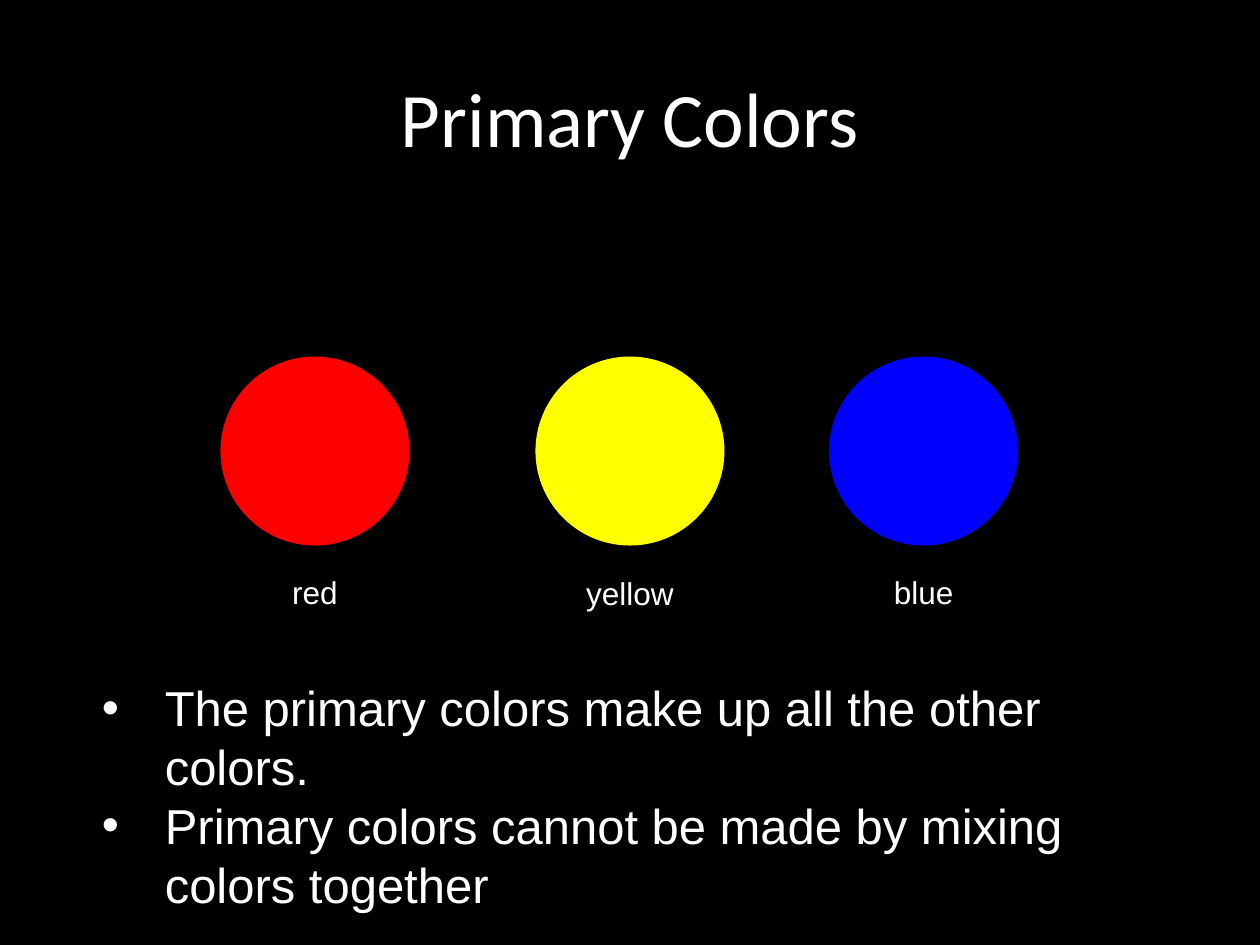
from dataclasses import dataclass

from lxml.etree import SubElement
from pptx import Presentation
from pptx.dml.color import RGBColor
from pptx.enum.shapes import MSO_SHAPE
from pptx.enum.text import MSO_ANCHOR, MSO_AUTO_SIZE, PP_ALIGN
from pptx.oxml.ns import qn
from pptx.slide import Slide
from pptx.util import Inches, Pt

BLACK = RGBColor(0x00, 0x00, 0x00)
WHITE = RGBColor(0xFF, 0xFF, 0xFF)
RED = RGBColor(0xFF, 0x00, 0x00)
YELLOW = RGBColor(0xFF, 0xFF, 0x00)
BLUE = RGBColor(0x00, 0x00, 0xFF)

DIAMETER = 1.5
CIRCLE_TOP = 2.83
LABEL_WIDTH = 1.33


@dataclass
class Swatch:
    name: str
    color: RGBColor
    left: float
    label_top: float = 4.5


SWATCHES = [
    Swatch("red", RED, 1.75),
    Swatch("yellow", YELLOW, 4.25, 4.51),
    Swatch("blue", BLUE, 6.58),
]


def add_text(s: Slide, lines: list[str], left: float, top: float, width: float,
             height: float, *, size: float, font: str = "Arial",
             align: PP_ALIGN = PP_ALIGN.LEFT, anchor: MSO_ANCHOR = MSO_ANCHOR.TOP,
             grow: bool = True, bullet: bool = False) -> None:
    tf = s.shapes.add_textbox(Inches(left), Inches(top),
                              Inches(width), Inches(height)).text_frame
    tf.word_wrap = True
    tf.auto_size = MSO_AUTO_SIZE.SHAPE_TO_FIT_TEXT if grow else MSO_AUTO_SIZE.NONE
    tf.vertical_anchor = anchor
    for i, line in enumerate(lines):
        p = tf.add_paragraph() if i else tf.paragraphs[0]
        p.alignment = align
        if bullet:
            pPr = p._p.get_or_add_pPr()
            pPr.set("marL", str(Inches(0.5)))
            pPr.set("indent", str(-Inches(0.5)))
            SubElement(pPr, qn("a:buFont"), typeface="Arial")
            SubElement(pPr, qn("a:buChar"), char="•")
        r = p.add_run()
        r.text = line
        r.font.size = Pt(size)
        r.font.name = font
        r.font.color.rgb = WHITE


def add_circle(s: Slide, swatch: Swatch) -> None:
    circle = s.shapes.add_shape(MSO_SHAPE.OVAL, Inches(swatch.left), Inches(CIRCLE_TOP),
                                Inches(DIAMETER), Inches(DIAMETER))
    circle.shadow.inherit = False
    circle.fill.solid()
    circle.fill.fore_color.rgb = swatch.color
    circle.line.fill.background()


def add_label(s: Slide, swatch: Swatch) -> None:
    """Centre the colour's name under its circle."""
    left = swatch.left + (DIAMETER - LABEL_WIDTH) / 2
    add_text(s, [swatch.name], left, swatch.label_top, LABEL_WIDTH, 0.42,
             size=18, align=PP_ALIGN.CENTER)


def main() -> None:
    prs = Presentation()
    prs.slide_width, prs.slide_height = Inches(10), Inches(7.5)
    s = prs.slides.add_slide(prs.slide_layouts[6])
    s.background.fill.solid()
    s.background.fill.fore_color.rgb = BLACK

    add_text(s, ["Primary Colors"], 0.5, 0.3, 9, 1.25, size=44, font="Calibri",
             align=PP_ALIGN.CENTER, anchor=MSO_ANCHOR.MIDDLE, grow=False)
    for swatch in SWATCHES:
        add_circle(s, swatch)
        add_label(s, swatch)
    add_text(s, ["The primary colors make up all the other colors.",
                 "Primary colors cannot be made by mixing colors together"],
             0.71, 5.33, 8.58, 1.99, size=28, bullet=True)
    prs.save("out.pptx")


if __name__ == "__main__":
    main()
